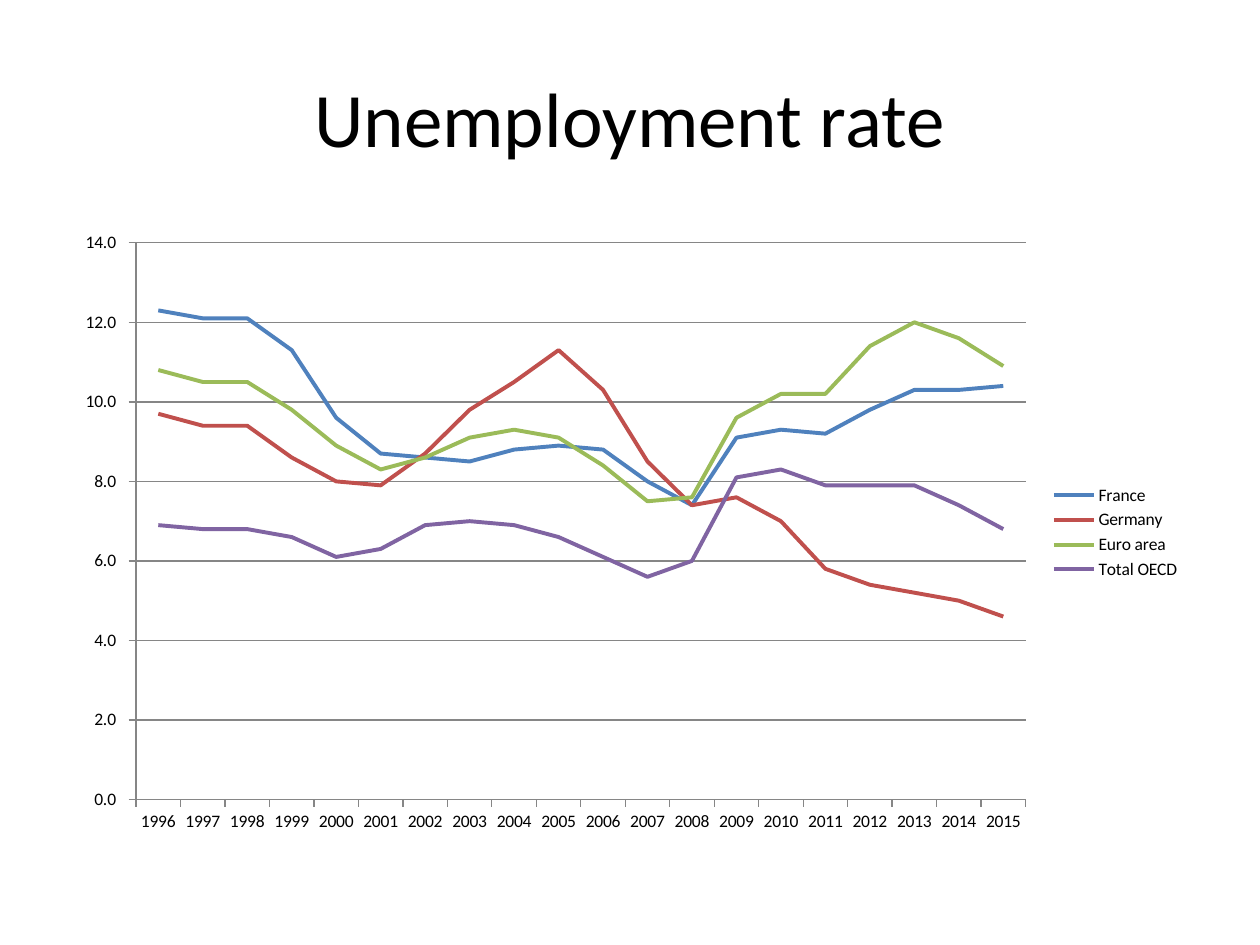
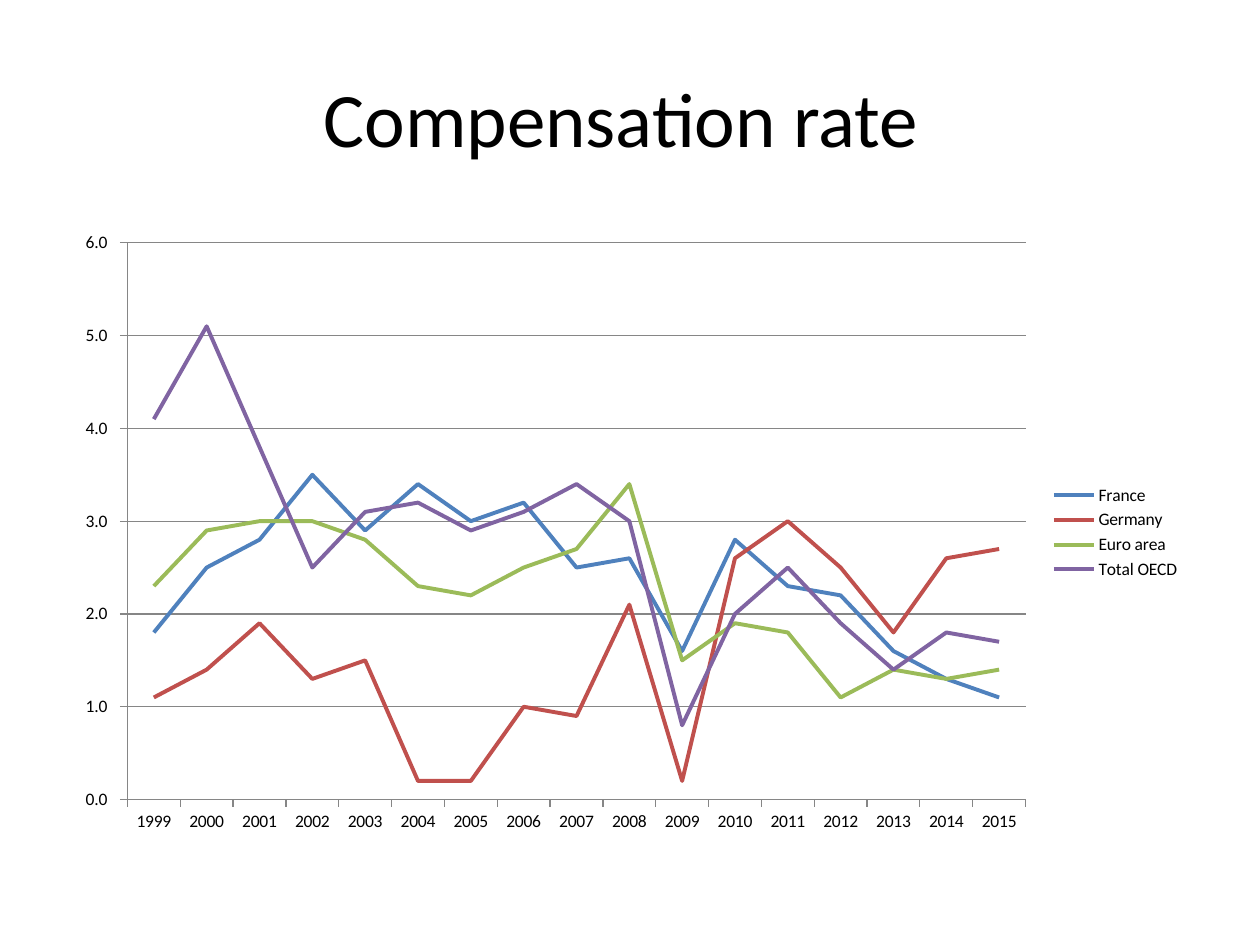
from dataclasses import dataclass

from pptx import Presentation
from pptx.chart.data import CategoryChartData
from pptx.dml.color import RGBColor
from pptx.enum.chart import XL_CHART_TYPE, XL_LEGEND_POSITION, XL_MARKER_STYLE, XL_TICK_MARK
from pptx.enum.text import MSO_ANCHOR, PP_ALIGN
from pptx.util import Inches, Pt


@dataclass(frozen=True)
class Theme:
    font: str = "Calibri"
    text: RGBColor = RGBColor(0x00, 0x00, 0x00)
    background: RGBColor = RGBColor(0xFF, 0xFF, 0xFF)
    axis: RGBColor = RGBColor(0x86, 0x86, 0x86)
    series: tuple = tuple(RGBColor.from_string(c) for c in ("4F81BD", "C0504D", "9BBB59", "8064A2"))
    title_size: Pt = Pt(44)
    chart_size: Pt = Pt(10)
    series_width: Pt = Pt(2.25)
    axis_width: Pt = Pt(0.75)
    left: Inches = Inches(0.5)
    width: Inches = Inches(9)


class Deck:
    def __init__(self, theme):
        self.theme = theme
        self.prs = Presentation()
        self.prs.slide_width = Inches(10)
        self.prs.slide_height = Inches(7.5)
        self.s = None

    def slide(self):
        self.s = self.prs.slides.add_slide(self.prs.slide_layouts[6])
        fill = self.s.background.fill
        fill.solid()
        fill.fore_color.rgb = self.theme.background

    def set_font(self, font, size):
        font.name = self.theme.font
        font.size = size
        font.color.rgb = self.theme.text

    def set_line(self, line, color, width):
        line.color.rgb = color
        line.width = width

    def title(self, text):
        t = self.theme
        tf = self.s.shapes.add_textbox(t.left, Inches(0.3), t.width, Inches(1.25)).text_frame
        tf.word_wrap = True
        tf.vertical_anchor = MSO_ANCHOR.MIDDLE
        p = tf.paragraphs[0]
        p.text = text
        p.alignment = PP_ALIGN.CENTER
        self.set_font(p.runs[0].font, t.title_size)

    def line_chart(self, years, series, top_value, step):
        t = self.theme
        data = CategoryChartData(number_format="0.0")
        data.categories = [str(year) for year in years]
        for name, values in series.items():
            data.add_series(name, values)
        chart = self.s.shapes.add_chart(
            XL_CHART_TYPE.LINE, t.left, Inches(1.75), t.width, Inches(4.95), data).chart
        self.set_font(chart.font, t.chart_size)
        chart.has_title = False
        chart.has_legend = True
        chart.legend.position = XL_LEGEND_POSITION.RIGHT
        chart.legend.include_in_layout = False

        plot = chart.plots[0]
        plot.vary_by_categories = False
        for line, color in zip(plot.series, t.series):
            line.smooth = False
            line.marker.style = XL_MARKER_STYLE.NONE
            self.set_line(line.format.line, color, t.series_width)

        values = chart.value_axis
        values.minimum_scale = 0
        values.maximum_scale = top_value
        values.major_unit = step
        values.tick_labels.number_format = r"0.0\ \ "
        values.tick_labels.number_format_is_linked = False
        values.has_major_gridlines = True
        self.set_line(values.major_gridlines.format.line, t.axis, t.axis_width)
        for axis in (chart.category_axis, values):
            axis.major_tick_mark = XL_TICK_MARK.OUTSIDE
            axis.minor_tick_mark = XL_TICK_MARK.NONE
            self.set_line(axis.format.line, t.axis, t.axis_width)


UNEMPLOYMENT = {
    "France": (12.3, 12.1, 12.1, 11.3, 9.6, 8.7, 8.6, 8.5, 8.8, 8.9,
               8.8, 8, 7.4, 9.1, 9.3, 9.2, 9.8, 10.3, 10.3, 10.4),
    "Germany": (9.7, 9.4, 9.4, 8.6, 8, 7.9, 8.7, 9.8, 10.5, 11.3,
                10.3, 8.5, 7.4, 7.6, 7, 5.8, 5.4, 5.2, 5, 4.6),
    "Euro area": (10.8, 10.5, 10.5, 9.8, 8.9, 8.3, 8.6, 9.1, 9.3, 9.1,
                  8.4, 7.5, 7.6, 9.6, 10.2, 10.2, 11.4, 12, 11.6, 10.9),
    "Total OECD ": (6.9, 6.8, 6.8, 6.6, 6.1, 6.3, 6.9, 7, 6.9, 6.6,
                    6.1, 5.6, 6, 8.1, 8.3, 7.9, 7.9, 7.9, 7.4, 6.8),
}
COMPENSATION = {
    "France": (1.8, 2.5, 2.8, 3.5, 2.9, 3.4, 3, 3.2, 2.5,
               2.6, 1.6, 2.8, 2.3, 2.2, 1.6, 1.3, 1.1),
    "Germany": (1.1, 1.4, 1.9, 1.3, 1.5, 0.2, 0.2, 1, 0.9,
                2.1, 0.2, 2.6, 3, 2.5, 1.8, 2.6, 2.7),
    "Euro area": (2.3, 2.9, 3, 3, 2.8, 2.3, 2.2, 2.5, 2.7,
                  3.4, 1.5, 1.9, 1.8, 1.1, 1.4, 1.3, 1.4),
    "Total OECD ": (4.1, 5.1, 3.8, 2.5, 3.1, 3.2, 2.9, 3.1, 3.4,
                    3, 0.8, 2, 2.5, 1.9, 1.4, 1.8, 1.7),
}


def main():
    deck = Deck(Theme())
    for title, first_year, series, top_value, step in (
        ("Unemployment rate", 1996, UNEMPLOYMENT, 14, 2),
        ("Compensation rate ", 1999, COMPENSATION, 6, 1),
    ):
        deck.slide()
        deck.title(title)
        deck.line_chart(range(first_year, 2016), series, top_value, step)
    deck.prs.save("out.pptx")


if __name__ == "__main__":
    main()
